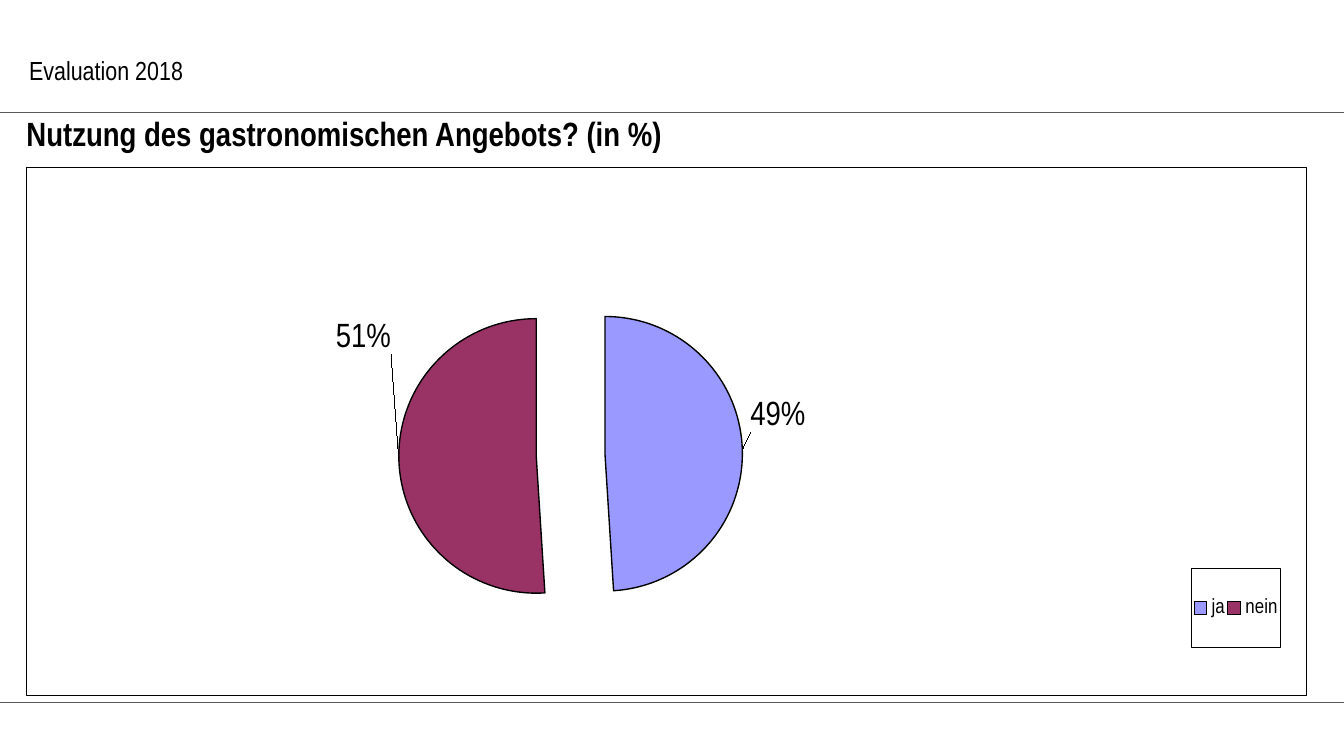
from typing import NamedTuple

from lxml import etree
from pptx import Presentation
from pptx.chart.data import CategoryChartData
from pptx.dml.color import RGBColor
from pptx.enum.chart import XL_CHART_TYPE, XL_LABEL_POSITION, XL_LEGEND_POSITION
from pptx.enum.shapes import MSO_CONNECTOR
from pptx.enum.text import MSO_ANCHOR, PP_ALIGN
from pptx.oxml import parse_xml
from pptx.oxml.ns import nsdecls, qn
from pptx.util import Cm, Pt

PIE = XL_CHART_TYPE.PIE_EXPLODED
OUTSIDE = XL_LABEL_POSITION.OUTSIDE_END
RIGHT = XL_LEGEND_POSITION.RIGHT
STRAIGHT = MSO_CONNECTOR.STRAIGHT
TOP = MSO_ANCHOR.TOP
LEFT = PP_ALIGN.LEFT
TITLE_ONLY = 5
FONT = "Arial Narrow"
COLORS = {"text": "000000", "rule": "595959", "ja": "9999FF", "nein": "993366"}


class Answer(NamedTuple):
    name: str
    percent: int
    label_shift: tuple[float, float]


class Rule(NamedTuple):
    left: float
    top: float


ANSWERS = [Answer("ja", 49, (0, -0.06)), Answer("nein", 51, (0, -0.23))]
RULES = [Rule(-0.1, 13.28), Rule(0, 2.13)]


def color(name: str) -> RGBColor:
    return RGBColor.from_string(COLORS[name])


def style_font(font, size: float, bold: bool = False) -> None:
    font.name = FONT
    font.size = Pt(size)
    font.bold = bold
    font.color.rgb = color("text")


def draw_rule(slide, rule: Rule) -> None:
    connector = slide.shapes.add_connector(
        STRAIGHT, Cm(rule.left), Cm(rule.top), Cm(25.4), Cm(rule.top))
    connector.line.color.rgb = color("rule")
    connector.line.width = Pt(0.5)
    etree.SubElement(connector._element.spPr, qn("a:effectLst"))


def write_text(shape, text: str, size: float, bold: bool = False) -> None:
    frame = shape.text_frame
    frame.word_wrap = True
    frame.vertical_anchor = TOP
    frame.text = text
    paragraph = frame.paragraphs[0]
    paragraph.alignment = LEFT
    paragraph.line_spacing = 1.0
    paragraph.space_before = Pt(0)
    style_font(paragraph.font, size, bold)


def manual_layout(target: str | None = None, edges: bool = False, **values: float):
    tags = [("layoutTarget", target)] if target else []
    if edges:
        tags += [("xMode", "edge"), ("yMode", "edge")]
    tags += values.items()
    body = "".join(f'<c:{tag} val="{value}"/>' for tag, value in tags)
    return parse_xml(
        f'<c:layout {nsdecls("c")}><c:manualLayout>{body}</c:manualLayout></c:layout>')


def outline(width: float):
    return parse_xml(
        f'<c:spPr {nsdecls("c", "a")}><a:noFill/><a:ln w="{Pt(width)}"><a:solidFill>'
        f'<a:srgbClr val="{COLORS["text"]}"/></a:solidFill></a:ln></c:spPr>')


def style_point(point, answer: Answer) -> None:
    point.format.fill.solid()
    point.format.fill.fore_color.rgb = color(answer.name)
    point.format.line.color.rgb = color("text")
    point.format.line.width = Pt(0.75)
    style_font(point.data_label.font, 18)
    point.data_label.position = OUTSIDE


def style_label(label, answer: Answer) -> None:
    x, y = answer.label_shift
    layout = manual_layout(x=x, y=y)
    label.find(qn("c:idx")).addnext(layout)
    layout.addnext(parse_xml(
        f'<c:numFmt {nsdecls("c")} formatCode="0%" sourceLinked="0"/>'))
    label.find(qn("c:showVal")).set("val", "0")
    label.find(qn("c:showPercent")).set("val", "1")


def draw_pie(slide) -> None:
    data = CategoryChartData()
    data.categories = [answer.name for answer in ANSWERS]
    data.add_series("Series 1", [answer.percent for answer in ANSWERS])
    chart = slide.shapes.add_chart(
        PIE, Cm(0.5), Cm(3.15), Cm(24.2), Cm(10), data).chart
    chart.has_title = False
    style_font(chart.font, 10)
    chart._chartSpace.find(qn("c:txPr")).addprevious(outline(0.5))

    plot = chart.plots[0]
    plot.vary_by_categories = True
    series = plot.series[0]
    series.format.line.color.rgb = color("text")
    series.format.line.width = Pt(0.75)
    for old in series._element.findall(qn("c:explosion")):
        series._element.remove(old)
    series._element.find(qn("c:spPr")).addnext(
        parse_xml(f'<c:explosion {nsdecls("c")} val="25"/>'))
    for index, answer in enumerate(ANSWERS):
        style_point(series.points[index], answer)
    for label, answer in zip(series._element.iter(qn("c:dLbl")), ANSWERS):
        style_label(label, answer)

    plot_area = chart._chartSpace.chart.plotArea
    for old in plot_area.findall(qn("c:layout")):
        plot_area.remove(old)
    plot_area.insert(0, manual_layout("inner", True, x=0.11, y=0.22, w=0.63, h=0.65))

    chart.has_legend = True
    legend = chart.legend
    legend.position = RIGHT
    legend.include_in_layout = False
    style_font(legend.font, 11)
    element = legend._element
    for old in element.findall(qn("c:layout")):
        element.remove(old)
    element.find(qn("c:legendPos")).addnext(
        manual_layout(edges=True, x=0.91, y=0.76, w=0.07, h=0.15))
    element.find(qn("c:txPr")).addprevious(outline(0.5))


def main() -> None:
    presentation = Presentation()
    presentation.slide_width = Cm(25.4)
    presentation.slide_height = Cm(14.29)
    slide = presentation.slides.add_slide(presentation.slide_layouts[TITLE_ONLY])

    for rule in RULES:
        draw_rule(slide, rule)
    draw_pie(slide)

    title = slide.shapes.title
    title.left, title.top, title.width, title.height = Cm(0.5), Cm(2.13), Cm(24), Cm(0.8)
    frame = title.text_frame
    frame.margin_left = frame.margin_top = frame.margin_right = frame.margin_bottom = 0
    write_text(title, "Nutzung des gastronomischen Angebots? (in %)", 18, True)

    header = slide.shapes.add_textbox(Cm(0.3), Cm(0.9), Cm(24.6), Cm(1.63))
    write_text(header, "Evaluation 2018", 14)

    presentation.save("out.pptx")


if __name__ == "__main__":
    main()
